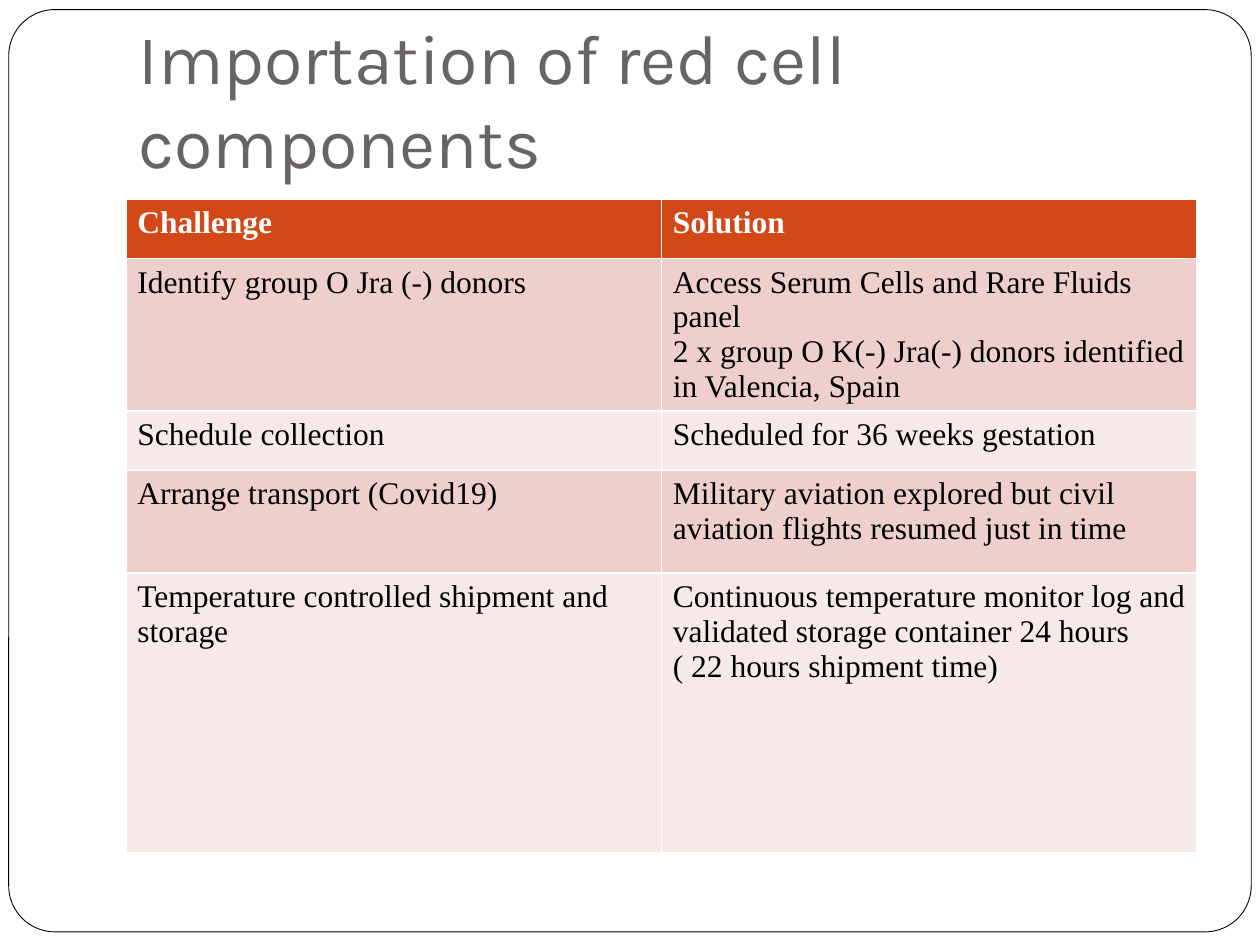
from pptx import Presentation
from pptx.dml.color import RGBColor
from pptx.enum.shapes import MSO_SHAPE
from pptx.enum.text import MSO_ANCHOR, MSO_AUTO_SIZE, PP_ALIGN
from pptx.util import Pt

ROWS = [
    ("Challenge", "Solution"),
    ("Identify group O Jra (-) donors",
     "Access Serum Cells and Rare Fluids panel\n"
     "2 x group O K(-) Jra(-) donors identified in Valencia, Spain"),
    ("Schedule collection", "Scheduled for 36 weeks gestation"),
    ("Arrange transport (Covid19)",
     "Military aviation explored but civil aviation flights resumed just in time"),
    ("Temperature controlled shipment and storage",
     "Continuous temperature monitor log and validated storage container "
     "24 hours ( 22 hours shipment time)"),
]
HEIGHTS = [33.8, 84.2, 33.8, 59, 159.8]
BANDS = ["EFCFCC", "F7E9E8"]


def paint(fill, color):
    fill.solid()
    fill.fore_color.rgb = RGBColor.from_string(color)


def style(par, name, size, color, bold=False):
    font = par.font
    font.name, font.size, font.bold = name, Pt(size), bold
    font.color.rgb = RGBColor.from_string(color)


def add_frame(slide, left, top, width, height):
    frame = slide.shapes.add_shape(
        MSO_SHAPE.ROUNDED_RECTANGLE, Pt(left), Pt(top), Pt(width), Pt(height))
    frame.adjustments[0] = 0.05
    frame.shadow.inherit = False
    paint(frame.fill, "FFFFFF")
    paint(frame.line.fill, "000000")
    frame.line.width = Pt(0.5)
    slide.shapes._spTree.insert(2, frame._element)


def set_title(slide, left, top, width, height):
    title = slide.shapes.title
    title.left, title.top = Pt(left), Pt(top)
    title.width, title.height = Pt(width), Pt(height)
    text = title.text_frame
    text.text = "Importation of red cell components"
    text.word_wrap = True
    text.auto_size = MSO_AUTO_SIZE.NONE
    text.vertical_anchor = MSO_ANCHOR.BOTTOM
    text.margin_bottom = Pt(7.2)
    par = text.paragraphs[0]
    par.alignment = PP_ALIGN.LEFT
    style(par, "Karla", 40, "696464")


def add_grid(slide, left, top, width):
    table = slide.shapes.add_table(
        len(ROWS), 2, Pt(left), Pt(top), Pt(width), Pt(sum(HEIGHTS))).table
    for col in table.columns:
        col.width = Pt(width / 2)
    for i, (row, height) in enumerate(zip(table.rows, HEIGHTS)):
        row.height = Pt(height)
        head = i == 0
        for cell, words in zip(row.cells, ROWS[i]):
            cell.text = words
            cell.margin_left = cell.margin_right = Pt(6.5)
            paint(cell.fill, "D34817" if head else BANDS[(i - 1) % 2])
            for par in cell.text_frame.paragraphs:
                style(par, "Times New Roman", 18,
                      "FFFFFF" if head else "000000", head)


def main():
    deck = Presentation()
    deck.slide_width, deck.slide_height = Pt(720), Pt(540)
    slide = deck.slides.add_slide(deck.slide_layouts[5])
    add_frame(slide, 5, 5.5, 710, 527)
    set_title(slide, 72, 21.6, 612, 90)
    add_grid(slide, 72, 114, 612)
    deck.save("out.pptx")


if __name__ == "__main__":
    main()
